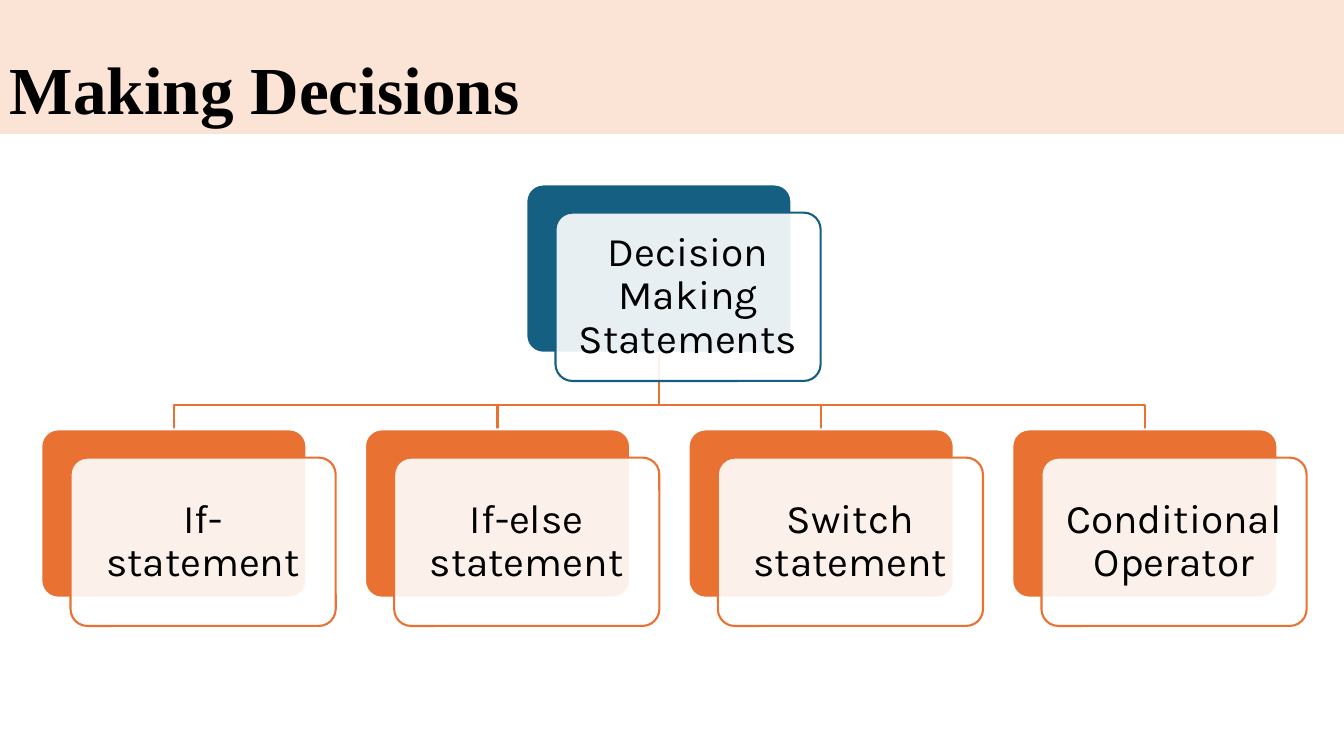
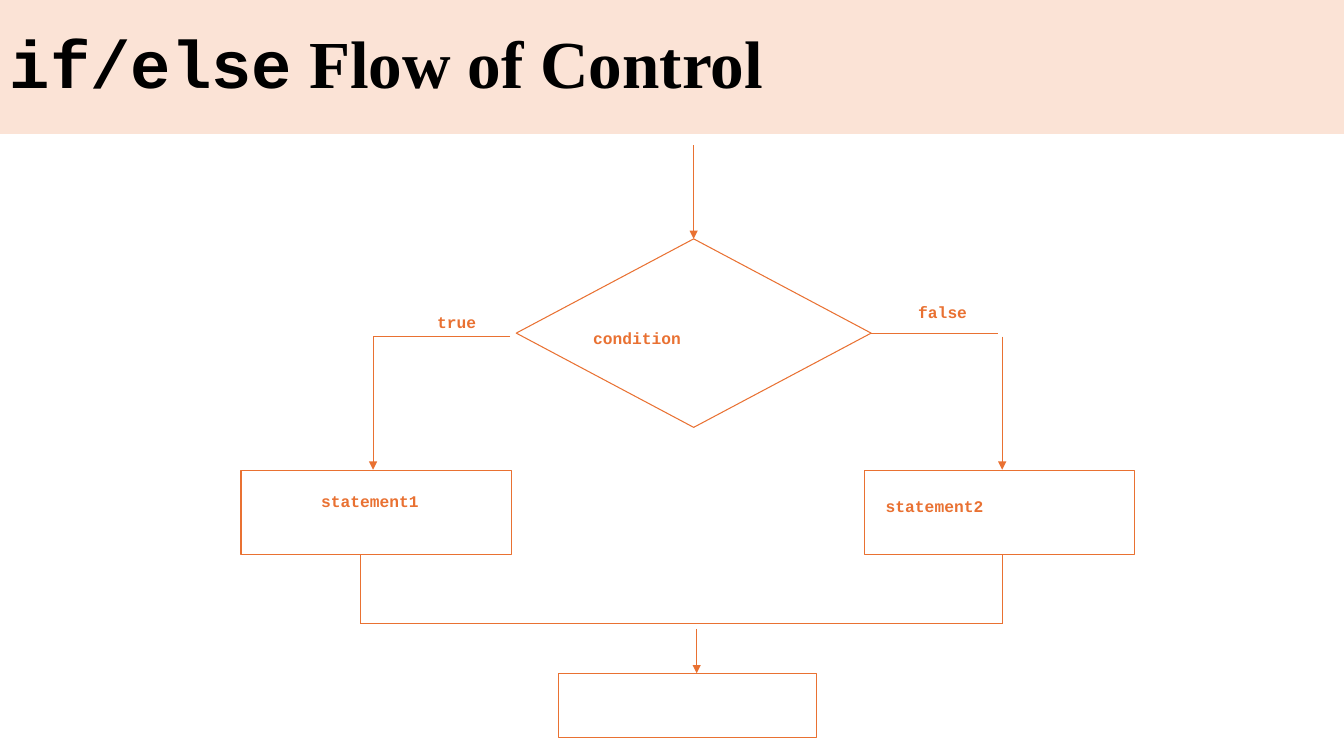
import pptx
import pptx.dml.color
import pptx.enum.shapes
import pptx.enum.text
import pptx.oxml
import pptx.oxml.ns
import pptx.util

Inches = pptx.util.Inches
Pt = pptx.util.Pt
RGBColor = pptx.dml.color.RGBColor
Shape = pptx.enum.shapes.MSO_SHAPE
Align = pptx.enum.text.PP_ALIGN
Anchor = pptx.enum.text.MSO_ANCHOR

# Shared colours, fonts and text formats
BAND = RGBColor(0xFB, 0xE3, 0xD6)
BLUE = RGBColor(0x15, 0x60, 0x82)
ORANGE = RGBColor(0xE9, 0x71, 0x32)
WHITE = RGBColor(0xFF, 0xFF, 0xFF)
BLACK = RGBColor(0x00, 0x00, 0x00)
SERIF, MONO = "Times New Roman", "Courier New"
TITLE = {"size": Pt(48), "bold": True}
CARD_TEXT = {"name": "Karla", "size": Pt(29), "bold": False}
FLOW_TEXT = {"name": MONO, "size": Pt(11.6), "bold": True}

# Card geometry, in inches
CARD_W, CARD_H = 2.63, 1.67
SHIFT_X, SHIFT_Y = 0.29, 0.28
ROOT_LEFT, ROOT_TOP = 5.22, 1.83
CHILD_LEFT, CHILD_TOP, CHILD_STEP = 0.41, 4.26, 3.21
BRANCH_Y = 4.02


def add_span(para, text, style, color=BLACK):
    span = para.add_run()
    span.text = text
    for name, value in style.items():
        setattr(span.font, name, value)
    span.font.color.rgb = color


def set_frame(box, anchor, margin=None):
    frame = box.text_frame
    frame.word_wrap = True
    frame.vertical_anchor = anchor
    if margin is not None:
        for side in ("left", "top", "right", "bottom"):
            setattr(frame, "margin_" + side, Inches(margin))
    return frame.paragraphs[0]


def add_box(page, kind, left, top, width, height, fill=None, line=None, weight=0.75):
    box = page.shapes.add_shape(kind, Inches(left), Inches(top), Inches(width), Inches(height))
    box.shadow.inherit = False
    if fill is None:
        box.fill.background()
    else:
        box.fill.solid()
        box.fill.fore_color.rgb = fill
    if line is None:
        box.line.fill.background()
    else:
        box.line.color.rgb = line
        box.line.width = Pt(weight)
    return box


def add_page(deck, anchor, title_spans):
    """Add a blank page with the title band."""
    page = deck.slides.add_slide(deck.slide_layouts[6])
    band = add_box(page, Shape.RECTANGLE, 0, 0, 13.33, 1.33, fill=BAND)
    para = set_frame(band, anchor)
    para.alignment = Align.LEFT
    para.line_spacing = 0.9
    for text, font in title_spans:
        add_span(para, text, {**TITLE, "name": font})
    return page


def add_card(page, text, left, top, color):
    """Add a solid card with a translucent text card shifted over it."""
    back = add_box(page, Shape.ROUNDED_RECTANGLE, left, top, CARD_W, CARD_H, color, WHITE, 1.5)
    front = add_box(page, Shape.ROUNDED_RECTANGLE, left + SHIFT_X, top + SHIFT_Y,
                    CARD_W, CARD_H, WHITE, color, 1.5)
    for card in (back, front):
        card.adjustments[0] = 0.1
    tint = front.fill._xPr.find(".//" + pptx.oxml.ns.qn("a:srgbClr"))
    tint.append(pptx.oxml.parse_xml(
        "<a:alpha %s val='90000'/>" % pptx.oxml.ns.nsdecls("a")))
    para = set_frame(front, Anchor.MIDDLE, 0.12)
    para.alignment = Align.CENTER
    para.line_spacing = 0.9
    add_span(para, text, CARD_TEXT)


def add_branch(page, child_left):
    """Add the stepped line from the root card to one child card."""
    start = ROOT_LEFT + CARD_W / 2
    end = child_left + CARD_W / 2
    points = [(start, BRANCH_Y), (end, BRANCH_Y), (end, CHILD_TOP)]
    builder = page.shapes.build_freeform(
        Inches(start), Inches(ROOT_TOP + CARD_H), scale=1.0)
    builder.add_line_segments([(Inches(x), Inches(y)) for x, y in points], close=False)
    branch = builder.convert_to_shape()
    branch.shadow.inherit = False
    branch.fill.background()
    branch.line.color.rgb = ORANGE
    branch.line.width = Pt(1.5)


def add_line(page, start, end, arrow=False):
    line = page.shapes.add_connector(
        pptx.enum.shapes.MSO_CONNECTOR.STRAIGHT, *map(Inches, start + end))
    line.line.color.rgb = ORANGE
    line.line.width = Pt(0.75)
    names = pptx.oxml.ns.nsdecls("a")
    if arrow:
        line.line._get_or_add_ln().append(
            pptx.oxml.parse_xml("<a:tailEnd %s type='triangle'/>" % names))
    line._element.spPr.append(pptx.oxml.parse_xml("<a:effectLst %s/>" % names))


def add_label(page, text, center_x, center_y):
    width, height = 1.5, 0.3
    box = page.shapes.add_textbox(Inches(center_x - width / 2), Inches(center_y - height / 2),
                                  Inches(width), Inches(height))
    para = set_frame(box, Anchor.MIDDLE, 0)
    para.alignment = Align.CENTER
    add_span(para, text, FLOW_TEXT, ORANGE)


def build_decisions(deck):
    page = add_page(deck, Anchor.BOTTOM, [("Making Decisions", SERIF)])
    children = ["If- statement", "If-else statement", "Switch statement", "Conditional Operator"]
    lefts = [CHILD_LEFT + CHILD_STEP * index for index in range(len(children))]
    for left in lefts:
        add_branch(page, left)
    add_card(page, "Decision Making Statements", ROOT_LEFT, ROOT_TOP, BLUE)
    for text, left in zip(children, lefts):
        add_card(page, text, left, CHILD_TOP, ORANGE)


def build_flow(deck):
    page = add_page(deck, Anchor.MIDDLE, [("if/else", MONO), (" Flow of Control", SERIF)])
    # Condition, the two statements and the next step
    for kind, left, top, width, height in [
        (Shape.FLOWCHART_DECISION, 5.12, 2.37, 3.52, 1.87),
        (Shape.FLOWCHART_PROCESS, 2.39, 4.67, 2.68, 0.83),
        (Shape.FLOWCHART_PROCESS, 8.57, 4.67, 2.68, 0.83),
        (Shape.RECTANGLE, 5.54, 6.68, 2.56, 0.64),
    ]:
        add_box(page, kind, left, top, width, height, line=ORANGE)
    # Labels, placed by their centres
    for text, x, y in [
        ("condition", 6.32, 3.35),
        ("true", 4.53, 3.19),
        ("false", 9.35, 3.1),
        ("statement1", 3.67, 4.97),
        ("statement2", 9.27, 5.02),
    ]:
        add_label(page, text, x, y)
    # Plain lines
    for start, end in [
        ((8.64, 3.31), (9.9, 3.31)),
        ((5.06, 3.34), (3.7, 3.34)),
        ((3.58, 5.5), (3.58, 6.19)),
        ((9.94, 5.5), (9.94, 6.19)),
        ((3.58, 6.19), (9.94, 6.19)),
    ]:
        add_line(page, start, end)
    # Downward arrows
    for x, top, bottom in [(6.88, 1.44, 2.37), (3.7, 3.34, 4.66),
                           (9.94, 3.34, 4.66), (6.91, 6.24, 6.68)]:
        add_line(page, (x, top), (x, bottom), arrow=True)


def main():
    deck = pptx.Presentation()
    deck.slide_width = Inches(13.33)
    deck.slide_height = Inches(7.5)
    build_decisions(deck)
    build_flow(deck)
    deck.save("out.pptx")


if __name__ == "__main__":
    main()
